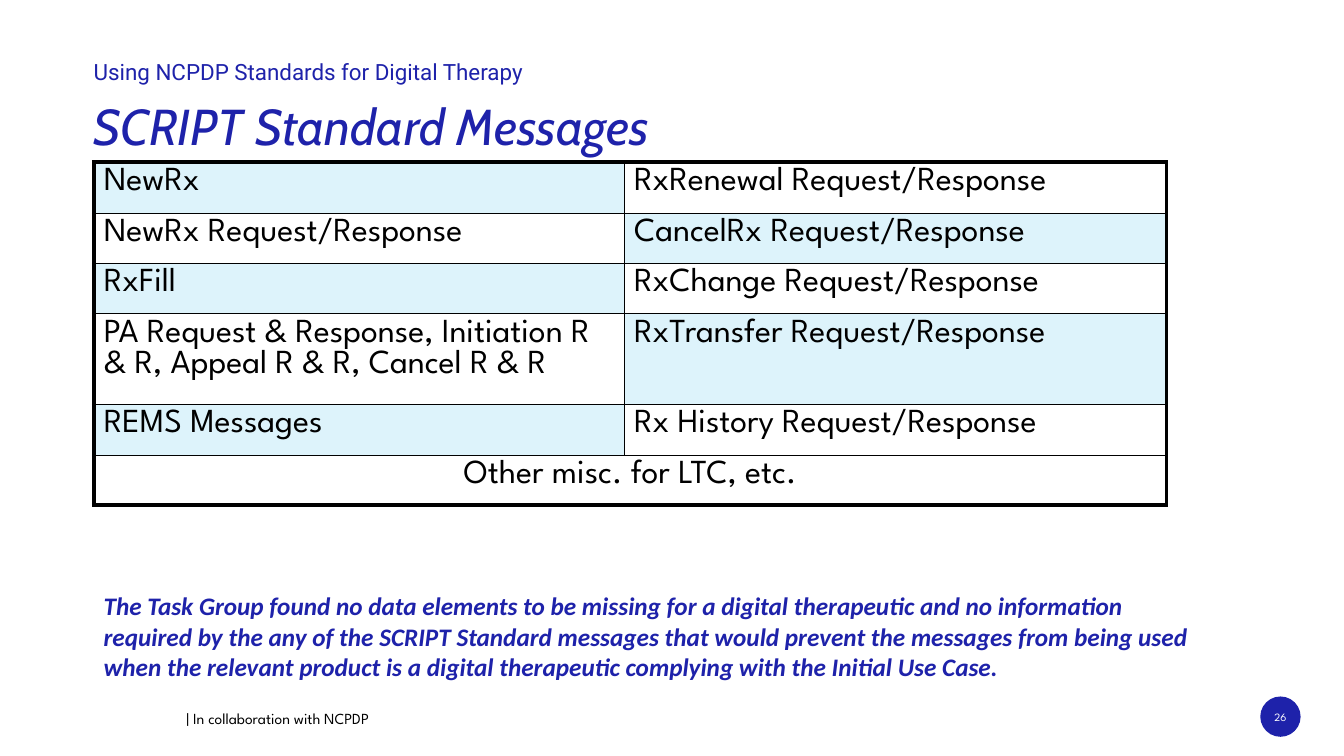
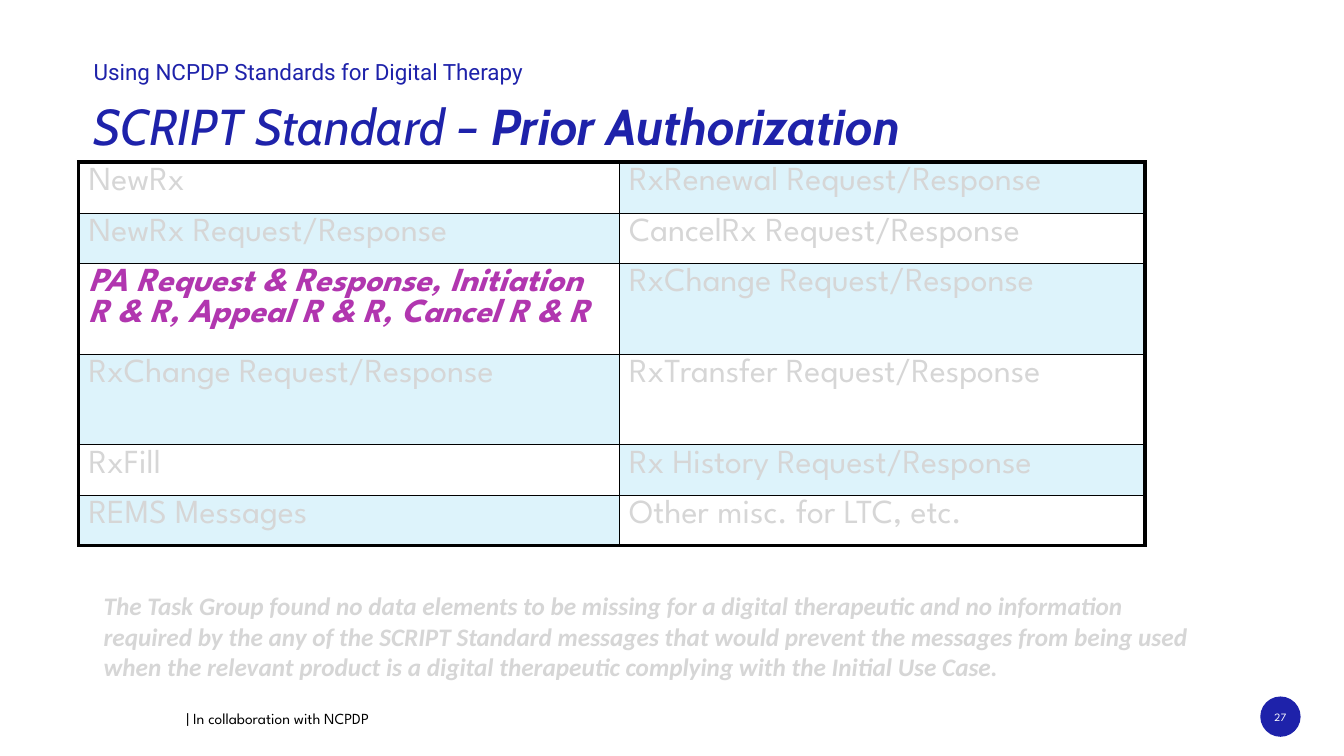
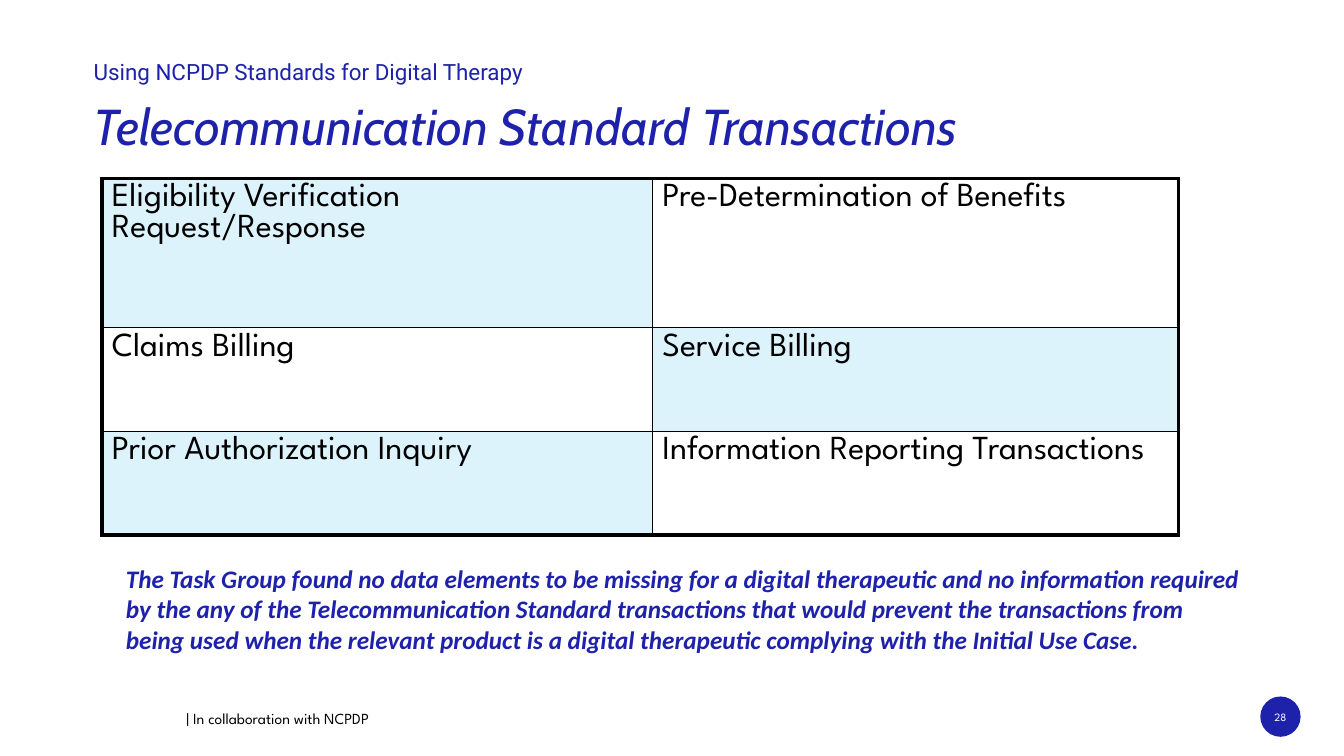
from dataclasses import dataclass

from lxml import etree
from pptx import Presentation
from pptx.dml.color import RGBColor
from pptx.enum.shapes import MSO_SHAPE
from pptx.enum.text import MSO_ANCHOR, MSO_AUTO_SIZE, PP_ALIGN
from pptx.oxml.ns import qn
from pptx.util import Inches, Pt

BLUE = RGBColor(0x1E, 0x22, 0xAA)
PALE_BLUE = RGBColor(0xDD, 0xF3, 0xFB)
GREY = RGBColor(0xD6, 0xD6, 0xD6)
PURPLE = RGBColor(0xB1, 0x36, 0xAF)
BLACK = RGBColor(0, 0, 0)
WHITE = RGBColor(0xFF, 0xFF, 0xFF)

BODY_FONT = "League Spartan"
TITLE_FONT = "Cabin"
NOTE_FONT = "Calibri"
LABEL_FONT = "Roboto"

THICK, THIN = Pt(3), Pt(0.25)
LEFT = 0.93
FIRST_NUMBER = 26

PRIOR_AUTH = "PA Request & Response, Initiation R & R, Appeal R & R, Cancel R & R"
OTHER = "Other misc. for LTC, etc."
NOTE = (
    "The Task Group found no data elements to be missing for a digital therapeutic "
    "and no information required by the any of the {standard} Standard {items} that "
    "would prevent the {items} from being used when the relevant product is a digital "
    "therapeutic complying with the Initial Use Case."
)
SCRIPT_NOTE = NOTE.format(standard="SCRIPT", items="messages")
TELECOM_NOTE = NOTE.format(standard="Telecommunication", items="transactions")


@dataclass(frozen=True)
class Style:
    font: str
    size: float
    color: RGBColor
    bold: bool = False
    italic: bool = False


@dataclass(frozen=True)
class Grid:
    """A two-column table; a row with one entry spans both columns."""
    left: float
    top: float
    cols: list[float]
    heights: list[float]
    rows: list[tuple[str, ...]]
    shade_first: bool = True
    color: RGBColor = BLACK
    highlight: str = ""


@dataclass(frozen=True)
class Page:
    title: str
    grid: Grid
    note: str
    note_box: tuple[float, float, float, float] = (LEFT, 5.81, 11.23, 1.01)
    note_color: RGBColor = BLUE
    bold_title: str = ""


LABEL = Style(LABEL_FONT, 16, BLUE)
TITLE = Style(TITLE_FONT, 36, BLUE, italic=True)
BOLD_TITLE = Style(TITLE_FONT, 36, BLUE, bold=True, italic=True)
FOOTER = Style(BODY_FONT, 11, BLACK)
NUMBER = Style(BODY_FONT, 8, WHITE)
HIGHLIGHT = Style(BODY_FONT, 24, PURPLE, bold=True, italic=True)

PAGES = [
    Page(
        "SCRIPT Standard Messages",
        Grid(LEFT, 1.61, [5.26, 5.38], [0.5, 0.5, 0.5, 0.9, 0.5, 0.5], [
            ("NewRx", "RxRenewal Request/Response"),
            ("NewRx Request/Response", "CancelRx Request/Response"),
            ("RxFill", "RxChange Request/Response"),
            (PRIOR_AUTH, "RxTransfer Request/Response"),
            ("REMS Messages", "Rx History Request/Response"),
            (OTHER,),
        ]),
        SCRIPT_NOTE,
    ),
    Page(
        "SCRIPT Standard – ",
        Grid(0.78, 1.61, [5.36, 5.22], [0.5, 0.5, 0.9, 0.9, 0.5, 0.5], [
            ("NewRx", "RxRenewal Request/Response"),
            ("NewRx Request/Response", "CancelRx Request/Response"),
            (PRIOR_AUTH, "RxChange Request/Response"),
            ("RxChange Request/Response", "RxTransfer Request/Response"),
            ("RxFill", "Rx History Request/Response"),
            ("REMS Messages", OTHER),
        ], shade_first=False, color=GREY, highlight=PRIOR_AUTH),
        SCRIPT_NOTE,
        note_color=GREY,
        bold_title="Prior Authorization",
    ),
    Page(
        "Telecommunication Standard Transactions",
        Grid(1.01, 1.77, [5.46, 5.22], [1.48, 1.03, 1.03], [
            ("Eligibility Verification Request/Response", "Pre-Determination of Benefits"),
            ("Claims Billing", "Service Billing"),
            ("Prior Authorization Inquiry", "Information Reporting Transactions"),
        ]),
        TELECOM_NOTE,
        note_box=(1.15, 5.54, 11.28, 1.01),
    ),
]


def add_run(p, content: str, style: Style) -> None:
    r = p.add_run()
    r.text = content
    r.font.name = style.font
    r.font.size = Pt(style.size)
    r.font.bold = style.bold
    r.font.italic = style.italic
    r.font.color.rgb = style.color


def add_text(slide, box: tuple[float, float, float, float],
             runs: list[tuple[str, Style]], inset: bool = True):
    """Add a one-paragraph text box and return its frame."""
    tf = slide.shapes.add_textbox(*map(Inches, box)).text_frame
    tf.word_wrap = True
    if inset:
        tf.auto_size = MSO_AUTO_SIZE.SHAPE_TO_FIT_TEXT
    else:
        tf.margin_left = tf.margin_right = tf.margin_top = tf.margin_bottom = 0
    for content, style in runs:
        add_run(tf.paragraphs[0], content, style)
    return tf


def set_borders(cell, widths: dict[str, int]) -> None:
    """Draw black cell edges; widths must be in the order L, R, T, B."""
    tc_pr = cell._tc.get_or_add_tcPr()
    for i, (side, width) in enumerate(widths.items()):
        ln = etree.Element(qn(f"a:ln{side}"), w=str(int(width)))
        fill = etree.SubElement(ln, qn("a:solidFill"))
        etree.SubElement(fill, qn("a:srgbClr"), val=str(BLACK))
        tc_pr.insert(i, ln)


def add_grid(slide, grid: Grid) -> None:
    n_rows, n_cols = len(grid.rows), len(grid.cols)
    table = slide.shapes.add_table(
        n_rows, n_cols, Inches(grid.left), Inches(grid.top),
        Inches(sum(grid.cols)), Inches(sum(grid.heights))).table
    table.first_row = table.horz_banding = False
    for column, width in zip(table.columns, grid.cols):
        column.width = Inches(width)
    body = Style(BODY_FONT, 24, grid.color)

    for i, entries in enumerate(grid.rows):
        table.rows[i].height = Inches(grid.heights[i])
        if len(entries) < n_cols:
            table.cell(i, 0).merge(table.cell(i, n_cols - 1))
            table.cell(i, 0).text_frame.paragraphs[0].alignment = PP_ALIGN.CENTER
        for j in range(n_cols):
            cell = table.cell(i, j)
            if (i + j) % 2 == (0 if grid.shade_first else 1) and not cell.is_spanned:
                cell.fill.solid()
                cell.fill.fore_color.rgb = PALE_BLUE
            else:
                cell.fill.background()
            set_borders(cell, {
                "L": THICK if j == 0 else THIN,
                "R": THICK if j + cell.span_width == n_cols else THIN,
                "T": THICK if i == 0 else THIN,
                "B": THICK if i == n_rows - 1 else THIN,
            })
        for j, entry in enumerate(entries):
            style = HIGHLIGHT if entry == grid.highlight else body
            add_run(table.cell(i, j).text_frame.paragraphs[0], entry, style)


def add_frame(slide, number: int) -> None:
    """Add the section label, footer and page number."""
    sp = slide.shapes.add_shape(
        MSO_SHAPE.OVAL, Inches(12.5), Inches(6.91), Inches(0.4), Inches(0.4))
    sp.shadow.inherit = False
    sp.fill.solid()
    sp.fill.fore_color.rgb = BLUE
    sp.line.fill.background()
    tf = add_text(slide, (LEFT, 0.64, 8.8, 0.63),
                  [("Using NCPDP Standards for Digital Therapy", LABEL)], inset=False)
    tf.paragraphs[0].line_spacing = 0.75
    add_text(slide, (1.75, 6.99, 4.4, 0.29), [("| In collaboration with NCPDP", FOOTER)])
    tf = add_text(slide, (12.42, 6.99, 0.56, 0.25), [(str(number), NUMBER)], inset=False)
    tf.vertical_anchor = MSO_ANCHOR.MIDDLE
    tf.paragraphs[0].alignment = PP_ALIGN.CENTER


def add_page(prs, page: Page, number: int) -> None:
    slide = prs.slides.add_slide(prs.slide_layouts[6])
    add_frame(slide, number)
    add_grid(slide, page.grid)
    runs = [(page.title, TITLE)]
    if page.bold_title:
        runs.append((page.bold_title, BOLD_TITLE))
    tf = add_text(slide, (LEFT, 1.08, 10.75, 0.69), runs, inset=False)
    tf.paragraphs[0].line_spacing = 0.75
    note_style = Style(NOTE_FONT, 18, page.note_color, bold=True, italic=True)
    add_text(slide, page.note_box, [(page.note, note_style)])


def main() -> None:
    prs = Presentation()
    prs.slide_width, prs.slide_height = Inches(13.33), Inches(7.5)
    for number, page in enumerate(PAGES, FIRST_NUMBER):
        add_page(prs, page, number)
    prs.save("out.pptx")


if __name__ == "__main__":
    main()
